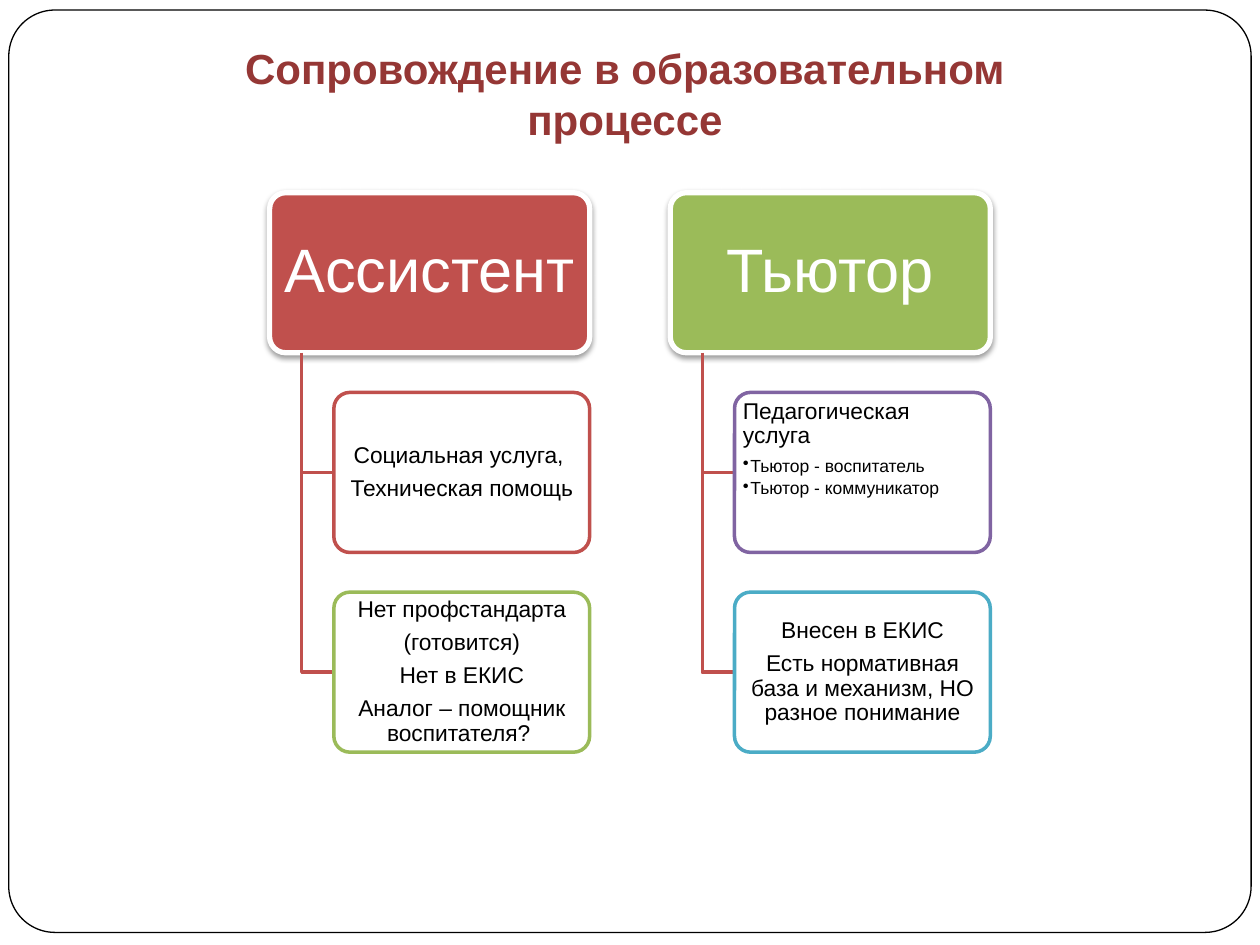
from lxml.etree import SubElement
from pptx import Presentation
from pptx.dml.color import RGBColor
from pptx.enum.shapes import MSO_SHAPE
from pptx.enum.text import MSO_ANCHOR, PP_ALIGN
from pptx.oxml.ns import qn
from pptx.util import Inches, Pt

COLORS = {
    "white": "FFFFFF", "black": "000000", "title": "953735", "red": "C0504D",
    "green": "9BBB59", "purple": "8064A2", "blue": "4BACC6",
}
FONT = "Arial"
BOX_HEIGHT = 1.27
HEADER_WIDTH, CHILD_WIDTH = 2.54, 2.03
TOP, ROW_STEP = 1.53, 1.585
TRUNK_OFFSET = 0.255
CHILD_OFFSET = HEADER_WIDTH - CHILD_WIDTH

# Left edge, heading, heading colour, children (border colour, lines, bullets)
BRANCHES = [
    (2.14, "Ассистент", "red", [
        ("red", ["Социальная услуга, ", "Техническая помощь"], []),
        ("green", ["Нет профстандарта", "(готовится)", "Нет в ЕКИС",
                   "Аналог – помощник воспитателя? "], []),
    ]),
    (5.32, "Тьютор", "green", [
        ("purple", ["Педагогическая услуга"],
         ["Тьютор - воспитатель", "Тьютор - коммуникатор"]),
        ("blue", ["Внесен в ЕКИС",
                  "Есть нормативная база и механизм, НО разное понимание"], []),
    ]),
]


def rgb(name):
    return RGBColor.from_string(COLORS[name])


def add_rounded_box(slide, left, top, width, height, radius, fill, line, line_width):
    shape = slide.shapes.add_shape(MSO_SHAPE.ROUNDED_RECTANGLE, Inches(left),
                                   Inches(top), Inches(width), Inches(height))
    shape.adjustments[0] = radius
    shape.shadow.inherit = False
    shape.fill.solid()
    shape.fill.fore_color.rgb = rgb(fill)
    shape.line.color.rgb = rgb(line)
    shape.line.width = Pt(line_width)
    return shape


def set_frame(text_frame, side, edge, anchor):
    text_frame.word_wrap = True
    text_frame.margin_left = text_frame.margin_right = Inches(side)
    text_frame.margin_top = text_frame.margin_bottom = Inches(edge)
    text_frame.vertical_anchor = anchor


def format_paragraph(paragraph, size, color, alignment=PP_ALIGN.CENTER, bold=False):
    paragraph.alignment = alignment
    for run in paragraph.runs:
        run.font.name = FONT
        run.font.size = Pt(size)
        run.font.bold = bold
        run.font.color.rgb = rgb(color)


def add_bullet(paragraph):
    paragraph.level = 1
    properties = paragraph._p.get_or_add_pPr()
    properties.set("marL", str(Inches(0.06)))
    properties.set("indent", str(-Inches(0.06)))
    SubElement(properties, qn("a:buChar"), char="•")


def add_soft_shadow(shape):
    effects = shape._element.spPr.find(qn("a:effectLst"))
    shadow = SubElement(effects, qn("a:outerShdw"), blurRad=str(Pt(3.1)),
                        dist=str(Pt(1.6)), dir="5400000", rotWithShape="0")
    color = SubElement(shadow, qn("a:srgbClr"), val=COLORS["black"])
    SubElement(color, qn("a:alpha"), val="38000")


def add_header(slide, left, text, color):
    shape = add_rounded_box(slide, left, TOP, HEADER_WIDTH, BOX_HEIGHT, 0.1,
                            color, "white", 3)
    add_soft_shadow(shape)
    set_frame(shape.text_frame, 0.07, 0.05, MSO_ANCHOR.MIDDLE)
    shape.text_frame.text = text
    paragraph = shape.text_frame.paragraphs[0]
    paragraph.line_spacing = 0.9
    format_paragraph(paragraph, 35, "white")


def add_elbow(slide, left, top, right, bottom):
    """Draw a branch line going down from the header, then right to a child."""
    builder = slide.shapes.build_freeform(Inches(left), Inches(top))
    builder.add_line_segments([(Inches(left), Inches(bottom)),
                               (Inches(right), Inches(bottom))], close=False)
    elbow = builder.convert_to_shape()
    elbow.shadow.inherit = False
    elbow.fill.background()
    elbow.line.color.rgb = rgb("red")
    elbow.line.width = Pt(2)


def add_child(slide, left, top, color, lines, bullets):
    shape = add_rounded_box(slide, left, top, CHILD_WIDTH, BOX_HEIGHT, 0.1,
                            "white", color, 2)
    fill_color = shape._element.spPr.find(qn("a:solidFill"))[0]
    SubElement(fill_color, qn("a:alpha"), val="90000")
    text_frame = shape.text_frame
    anchor = MSO_ANCHOR.TOP if bullets else MSO_ANCHOR.MIDDLE
    alignment = PP_ALIGN.LEFT if bullets else PP_ALIGN.CENTER
    set_frame(text_frame, 0.03, 0.02, anchor)
    text_frame.text = "\n".join(lines + bullets)
    for index, paragraph in enumerate(text_frame.paragraphs):
        is_bullet = index >= len(lines)
        paragraph.line_spacing = 0.9
        paragraph.space_after = Pt(2 if is_bullet else 4.8)
        format_paragraph(paragraph, 10 if is_bullet else 13, "black", alignment)
        if is_bullet:
            add_bullet(paragraph)


def add_branch(slide, left, heading, color, children):
    add_header(slide, left, heading, color)
    child_left = left + CHILD_OFFSET
    for row, child in enumerate(children, start=1):
        child_top = TOP + row * ROW_STEP
        add_elbow(slide, left + TRUNK_OFFSET, TOP + BOX_HEIGHT,
                  child_left, child_top + BOX_HEIGHT / 2)
        add_child(slide, child_left, child_top, *child)


def add_title(slide, text):
    box = slide.shapes.add_textbox(Inches(1.22), Inches(0.29), Inches(7.48), Inches(0.91))
    set_frame(box.text_frame, 0.1, 0.05, MSO_ANCHOR.TOP)
    box.text_frame.text = text
    format_paragraph(box.text_frame.paragraphs[0], 24, "title", bold=True)


def main():
    presentation = Presentation()
    presentation.slide_width, presentation.slide_height = Inches(10), Inches(7.5)
    slide = presentation.slides.add_slide(presentation.slide_layouts[6])
    add_rounded_box(slide, 0.07, 0.08, 9.86, 7.32, 0.05, "white", "black", 0.75)
    for branch in BRANCHES:
        add_branch(slide, *branch)
    add_title(slide, "Сопровождение в образовательном процессе")
    presentation.save("out.pptx")


if __name__ == "__main__":
    main()
